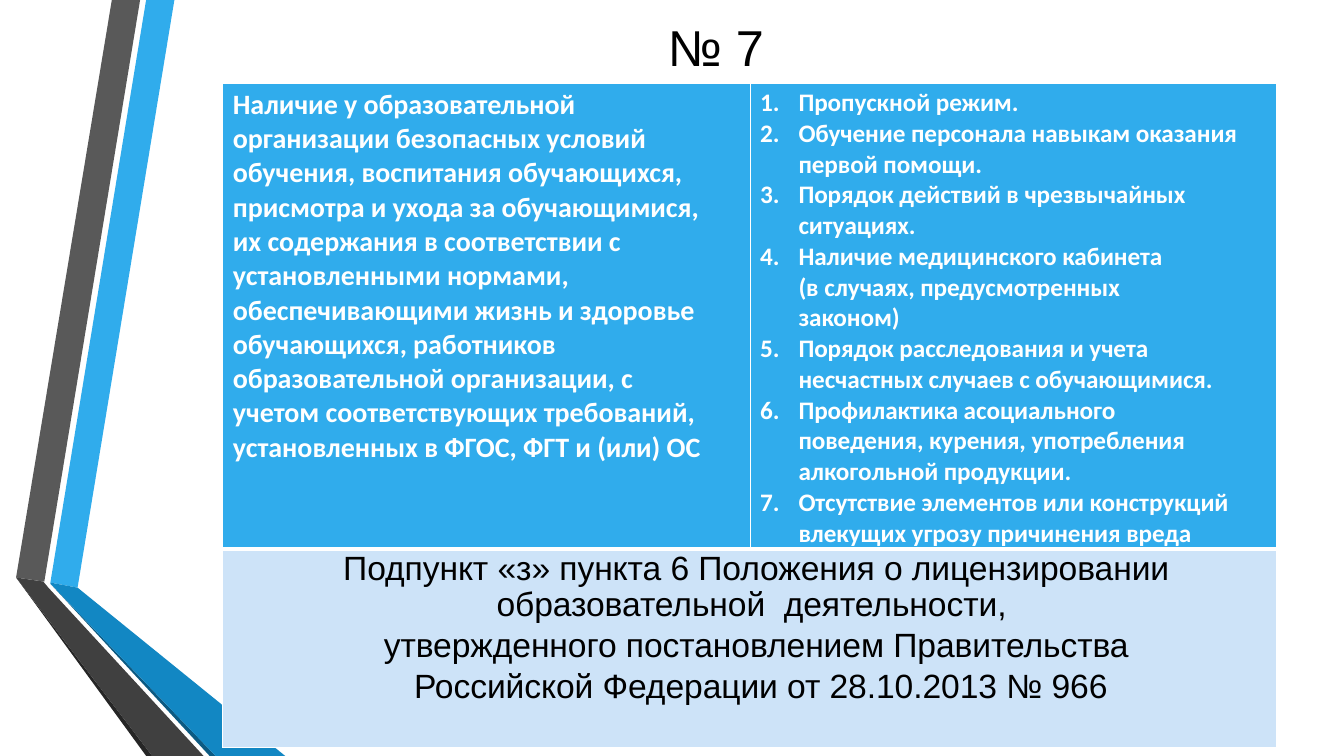
from dataclasses import dataclass

from lxml.etree import SubElement
from pptx import Presentation
from pptx.dml.color import RGBColor as Color
from pptx.enum.text import MSO_ANCHOR as Anchor, PP_ALIGN as Align
from pptx.oxml.ns import qn
from pptx.util import Inches, Pt


@dataclass(frozen=True)
class Theme:
    blue: str = "30ACEC"
    deep_blue: str = "1287C3"
    navy: str = "0C5A82"
    grey: str = "595959"
    dark_grey: str = "404040"
    charcoal: str = "262626"
    pale_blue: str = "CDE3F8"
    white: str = "FFFFFF"
    black: str = "000000"
    heading_font: str = "Arial"
    body_font: str = "Calibri"
    title_size: int = 36
    source_size: int = 24
    requirement_size: int = 20
    measure_size: int = 18


@dataclass(frozen=True)
class Ribbon:
    color: str
    points: tuple


@dataclass(frozen=True)
class Line:
    text: str
    number: int = 0
    before: float = 0
    right: float = 0
    spacing: float = 1.0


@dataclass(frozen=True)
class TextStyle:
    font: str
    size: int
    color: str
    bold: bool = False
    align: Align = Align.LEFT
    left: float = 0
    hanging: float = 0
    tracking: int = 0


@dataclass(frozen=True)
class CellBlock:
    row: int
    column: int
    fill: str
    top: float
    bottom_border: float
    style: TextStyle
    lines: tuple


THEME = Theme()

RIBBONS = (
    Ribbon(THEME.blue, ((0.5, 5.78), (0.77, 5.83), (1.73, 0), (1.45, 0))),
    Ribbon(THEME.grey, ((1.39, 0), (1.11, 0), (0.16, 5.73), (0.44, 5.77))),
    Ribbon(THEME.charcoal, ((0.16, 5.73), (1.45, 7.5), (1.51, 7.5))),
    Ribbon(THEME.navy, ((0.5, 5.79), (2.08, 7.5), (2.14, 7.5))),
    Ribbon(THEME.deep_blue, ((0.5, 5.79), (2.14, 7.5), (2.83, 7.5), (0.77, 5.83), (0.5, 5.78))),
    Ribbon(THEME.dark_grey, ((2.02, 7.5), (0.48, 5.83), (0.43, 5.77), (0.16, 5.73), (1.51, 7.5))),
)

TITLE_STYLE = TextStyle(THEME.heading_font, THEME.title_size, THEME.black, align=Align.CENTER)
REQUIREMENT_STYLE = TextStyle(THEME.body_font, THEME.requirement_size, THEME.white, True,
                              left=0.1, tracking=-5)
MEASURE_STYLE = TextStyle(THEME.body_font, THEME.measure_size, THEME.white, True,
                          left=0.48, hanging=0.38, tracking=-5)
SOURCE_STYLE = TextStyle(THEME.heading_font, THEME.source_size, THEME.black,
                         align=Align.CENTER, left=0.13, tracking=-5)

BLOCKS = (
    CellBlock(0, 0, THEME.blue, 0.04, 3, REQUIREMENT_STYLE, (
        Line("Наличие у образовательной организации безопасных условий обучения, воспитания "
             "обучающихся, присмотра и ухода за обучающимися, их содержания в соответствии с",
             before=2.6, right=0.4),
        Line("установленными нормами,"),
        Line("обеспечивающими жизнь и здоровье обучающихся, работников"),
        Line("образовательной организации, с"),
        Line("учетом соответствующих требований,"),
        Line("установленных в ФГОС, ФГТ и (или) ОС"),
    )),
    CellBlock(0, 1, THEME.blue, 0.04, 3, MEASURE_STYLE, (
        Line("Пропускной режим.", 1, before=2.6),
        Line("Обучение персонала навыкам оказания первой помощи.", 2),
        Line("Порядок действий в чрезвычайных ситуациях.", 3),
        Line("Наличие медицинского кабинета", 4),
        Line("(в случаях, предусмотренных законом)", right=1),
        Line("Порядок расследования и учета", 5),
        Line("несчастных случаев с обучающимися."),
        Line("Профилактика асоциального", 6),
        Line("поведения, курения, употребления алкогольной продукции."),
        Line("Отсутствие элементов или конструкций влекущих угрозу причинения вреда", 7),
    )),
    CellBlock(1, 0, THEME.pale_blue, 0.03, 1, SOURCE_STYLE, (
        Line("Подпункт «з» пункта 6 Положения о лицензировании "
             "образовательной  деятельности, ", before=2.5, spacing=0.95),
        Line("утвержденного постановлением Правительства", before=2.5),
        Line(" Российской Федерации от 28.10.2013 № 966", before=2.5),
    )),
)


def apply_format(target: object, values: dict) -> None:
    for name, value in values.items():
        setattr(target, name, value)


def draw_ribbon(slide: object, ribbon: Ribbon) -> None:
    start, *others = [(Inches(x), Inches(y)) for x, y in ribbon.points]
    builder = slide.shapes.build_freeform(*start)
    builder.add_line_segments(others, close=True)
    shape = builder.convert_to_shape()
    shape.shadow.inherit = False
    shape.fill.solid()
    shape.fill.fore_color.rgb = Color.from_string(ribbon.color)
    shape.line.fill.background()


def write_line(paragraph: object, line: Line, style: TextStyle) -> None:
    apply_format(paragraph, {"alignment": style.align, "space_before": Pt(line.before),
                             "space_after": Pt(0), "line_spacing": line.spacing})
    run = paragraph.add_run()
    run.text = line.text
    apply_format(run.font, {"name": style.font, "size": Pt(style.size), "bold": style.bold})
    run.font.color.rgb = Color.from_string(style.color)
    run.font._element.set("spc", str(style.tracking))
    properties = paragraph._p.get_or_add_pPr()
    hanging = style.hanging if line.number else 0
    for name, length in {"marL": style.left, "marR": line.right, "indent": -hanging}.items():
        properties.set(name, str(Inches(length)))
    if line.number:
        SubElement(properties, qn("a:buFont"), typeface=style.font)
        SubElement(properties, qn("a:buAutoNum"), type="arabicPeriod", startAt=str(line.number))
    else:
        SubElement(properties, qn("a:buNone"))


def write_lines(frame: object, lines: tuple, style: TextStyle) -> None:
    for index, line in enumerate(lines):
        paragraph = frame.add_paragraph() if index else frame.paragraphs[0]
        write_line(paragraph, line, style)


def draw_borders(cell: object, bottom: float) -> None:
    properties = cell._tc.get_or_add_tcPr()
    for side, width in {"lnL": 1, "lnR": 1, "lnT": 1, "lnB": bottom}.items():
        border = SubElement(properties, qn(f"a:{side}"), w=str(Pt(width)))
        fill = SubElement(border, qn("a:solidFill"))
        SubElement(fill, qn("a:srgbClr"), val=THEME.white)


def fill_cell(table: object, block: CellBlock) -> None:
    cell = table.cell(block.row, block.column)
    apply_format(cell, {"margin_left": 0, "margin_right": 0, "margin_bottom": 0,
                        "margin_top": Inches(block.top), "vertical_anchor": Anchor.TOP})
    draw_borders(cell, block.bottom_border)
    cell.fill.solid()
    cell.fill.fore_color.rgb = Color.from_string(block.fill)
    write_lines(cell.text_frame, block.lines, block.style)


def draw_table(slide: object) -> None:
    table = slide.shapes.add_table(2, 2, Inches(2.21), Inches(0.83),
                                   Inches(10.45), Inches(6.22)).table
    apply_format(table, {"first_row": False, "horz_banding": False})
    for column, width in zip(table.columns, (5.23, 5.22)):
        column.width = Inches(width)
    for row, height in zip(table.rows, (4.25, 1.97)):
        row.height = Inches(height)
    table.cell(1, 0).merge(table.cell(1, 1))
    for block in BLOCKS:
        fill_cell(table, block)


def draw_title(slide: object) -> None:
    title = slide.shapes.title
    apply_format(title, {"left": Inches(1.62), "top": Inches(0.09),
                         "width": Inches(10.96), "height": Inches(0.74)})
    apply_format(title.text_frame, {"vertical_anchor": Anchor.MIDDLE, "word_wrap": True})
    write_lines(title.text_frame, (Line("№ 7", before=1.1),), TITLE_STYLE)


def main() -> None:
    presentation = Presentation()
    apply_format(presentation, {"slide_width": Inches(13.33), "slide_height": Inches(7.5)})
    slide = presentation.slides.add_slide(presentation.slide_layouts[5])
    for ribbon in RIBBONS:
        draw_ribbon(slide, ribbon)
    draw_title(slide)
    draw_table(slide)
    presentation.save("out.pptx")


if __name__ == "__main__":
    main()
